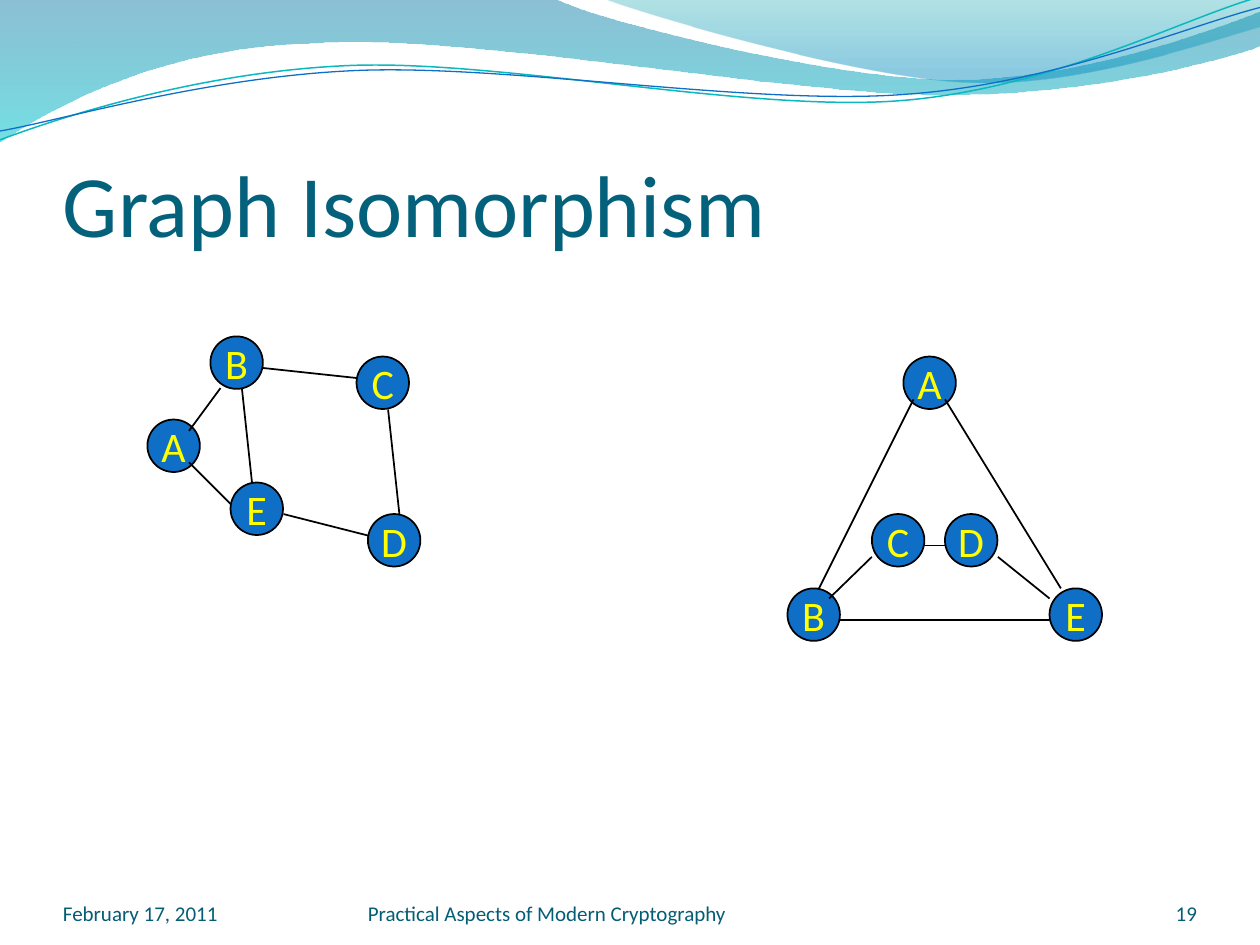
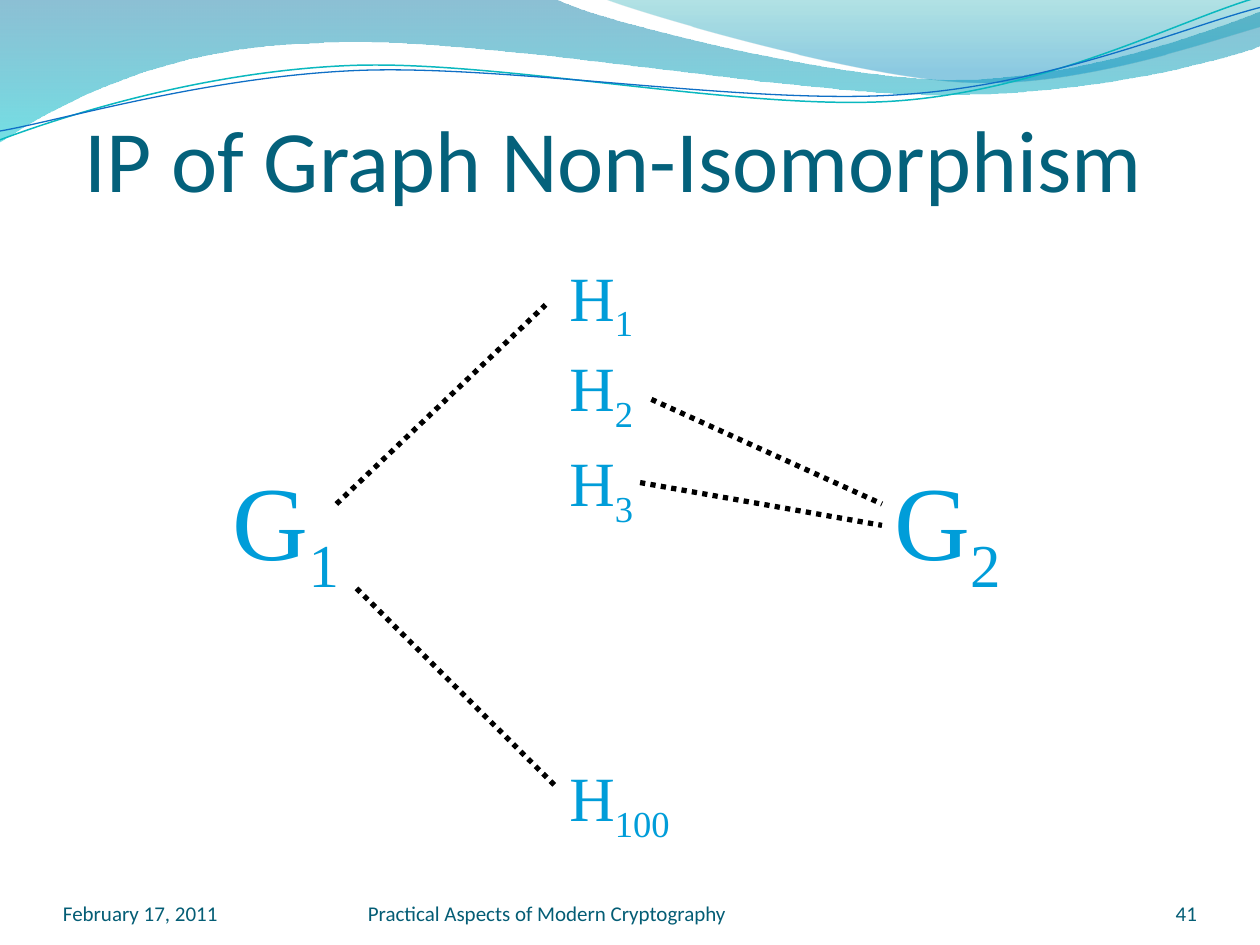
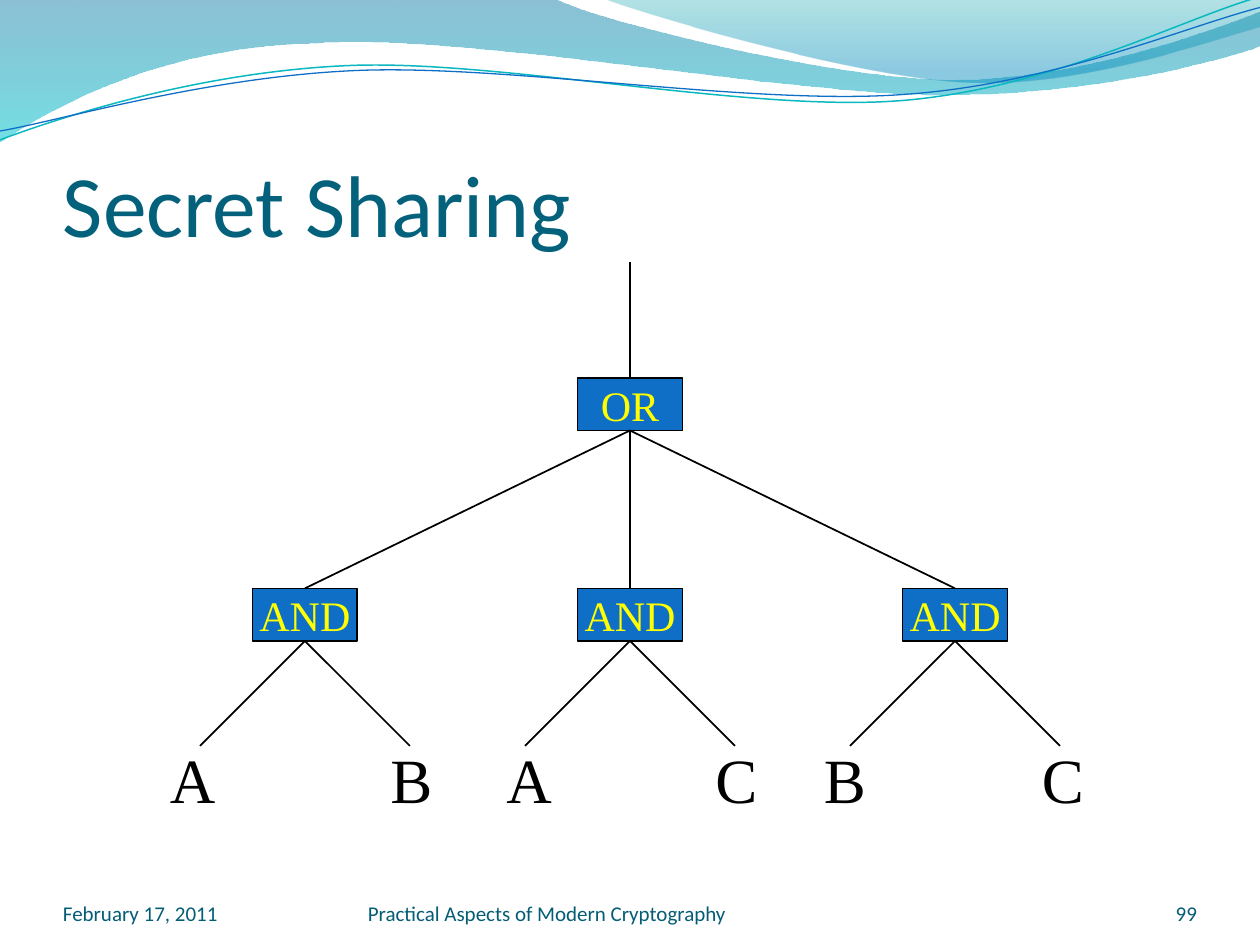
from math import cos, radians, sin

from pptx import Presentation
from pptx.dml.color import RGBColor as RGB
from pptx.enum.dml import MSO_LINE
from pptx.enum.shapes import MSO_CONNECTOR as CXN, MSO_SHAPE as SHAPE
from pptx.enum.text import MSO_ANCHOR as ANCHOR, MSO_AUTO_SIZE as FIT, PP_ALIGN as ALIGN
from pptx.oxml.ns import qn
from pptx.util import Inches, Pt

COLORS = {
    "title": "04617B", "footer": "045D75", "blue": "0F6FC6", "teal": "0AB8BF",
    "graph": "009DD9", "label": "FFFF00", "black": "000000",
    "wave_top": "0074A1", "wave_bottom": "00C6CF",
    "crest_top": "00A1A9", "crest_bottom": "008BBF",
}
C = {name: RGB.from_string(value) for name, value in COLORS.items()}
SANS, SERIF = "Calibri", "Times New Roman"
DATE, COURSE = "February 17, 2011", "Practical Aspects of Modern Cryptography"
TILT = 2.7  # degrees the thin waves are turned to the left

# Outline: start point, then lines (x, y) and curves (two controls, end).
# Filled bands: (colour, position, opacity) per gradient stop.
FILLED = [
    ([(0, 0), (4.4, -0.01), (4.76, 0.17, 6.64, 0.63, 7.58, 0.63),
      (8.53, 0.63, 9.58, 0.26, 10, 0.09), (10.01, 0.36),
      (9.83, 0.44, 8.7, 0.76, 7.46, 0.75), (6.22, 0.75, 3.82, 0.28, 2.57, 0.34),
      (1.29, 0.36, 0.46, 0.83, -0.01, 1.13), (0, 0)],
     [("wave_top", 0, 45), ("wave_bottom", 1, 55)]),
    ([(4.79, -0.01), (5.09, 0.11, 6.82, 0.62, 7.69, 0.65),
      (8.56, 0.69, 9.61, 0.32, 10, 0.21), (10, 0), (4.79, -0.01)],
     [("crest_top", 0, 30), ("crest_bottom", 0.8, 45)]),
]
# Thin waves: colour, width and the centre they are turned about.
THIN = [
    ([(0, 1.11), (0.48, 0.93, 1.58, 0.57, 2.77, 0.52),
      (3.95, 0.47, 5.93, 0.89, 7.13, 0.8), (8.33, 0.71, 9.38, 0.15, 9.98, -0.02)],
     "teal", 0.85, (4.99, 0.58)),
    ([(0, 1.04), (0.47, 0.96, 1.64, 0.61, 2.83, 0.56),
      (4.03, 0.51, 5.97, 0.84, 7.17, 0.75), (8.36, 0.67, 9.41, 0.21, 10, 0.06)],
     "blue", 0.75, (5, 0.59)),
]


def add_text(s, box, text, size, color, font=SANS, sub="", align=ALIGN.LEFT,
             anchor=ANCHOR.TOP, margins=(0.1, 0.05, 0.1, 0.05), wrap=False, shape=None):
    """Add a text box, or a filled preset shape, with an optional subscript."""
    place = [Inches(v) for v in box]
    if shape is None:
        sp = s.shapes.add_textbox(*place)
    else:
        sp = s.shapes.add_shape(shape, *place)
        sp.shadow.inherit = False
        sp.fill.solid()
        sp.fill.fore_color.rgb = C["blue"]
        sp.line.color.rgb = C["black"]
        sp.line.width = Pt(1)
    tf = sp.text_frame
    tf.word_wrap = wrap
    if shape is None and not wrap:
        tf.auto_size = FIT.SHAPE_TO_FIT_TEXT
    tf.vertical_anchor = anchor
    tf.margin_left, tf.margin_top, tf.margin_right, tf.margin_bottom = map(Inches, margins)
    p = tf.paragraphs[0]
    p.alignment = align
    p.font.name, p.font.size = font, Pt(size)
    p.font.color.rgb = C[color]
    for part in filter(None, (text, sub)):
        r = p.add_run()
        r.text = part
        r.font.name, r.font.size = font, Pt(size)
        r.font.color.rgb = C[color]
    if sub:
        r.font._element.set("baseline", "-25000")
    return sp


def add_line(s, x1, y1, x2, y2, width=1, dash=None):
    line = s.shapes.add_connector(CXN.STRAIGHT, *map(Inches, (x1, y1, x2, y2)))
    line.line.color.rgb = C["black"]
    line.line.width = Pt(width)
    if dash:
        line.line.dash_style = dash
    spPr = line._element.spPr
    spPr.append(spPr.makeelement(qn("a:effectLst"), {}))
    return line


prs = Presentation()
prs.slide_width, prs.slide_height = Inches(10), Inches(7.5)

# Shared frame: bands, title and footer
slides = []
for title, title_box, number in [
    ("Graph Isomorphism", (0.5, 0.77, 9, 1.25), "19"),
    ("IP of Graph Non-Isomorphism", (0.67, 0.42, 8.67, 1.25), "41"),
    ("Secret Sharing", (0.5, 0.77, 9, 1.25), "99"),
]:
    s = prs.slides.add_slide(prs.slide_layouts[6])
    slides.append(s)
    for outline, *style in FILLED + THIN:
        filled = len(style) == 1
        turn, (cx, cy) = (0, (0, 0)) if filled else (radians(TILT), style[2])
        points = []
        for seg in outline:
            for x, y in zip(seg[::2], seg[1::2]):
                dx, dy = x - cx, y - cy
                points.append((Inches(cx + dx * cos(turn) - dy * sin(turn)),
                               Inches(cy + dx * sin(turn) + dy * cos(turn))))
        builder = s.shapes.build_freeform(*points[0])
        builder.add_line_segments(points[1:], close=filled)
        sp = builder.convert_to_shape()
        sp.shadow.inherit = False
        # Join the three points of each curve into one Bezier segment
        lines = iter(list(sp._element.iter(qn("a:lnTo"))))
        for seg in outline[1:]:
            first = next(lines)
            if len(seg) == 6:
                curve = first.makeelement(qn("a:cubicBezTo"), {})
                first.addprevious(curve)
                for line in (first, next(lines), next(lines)):
                    curve.append(line[0])
                    line.getparent().remove(line)
        if filled:
            sp.line.fill.background()
            sp.fill.gradient()
            sp.fill.gradient_angle = 270
            for stop, (color, position, opacity) in zip(sp.fill.gradient_stops, style[0]):
                stop.color.rgb = C[color]
                stop.position = position
                rgb = stop._gs.find(qn("a:srgbClr"))
                rgb.append(rgb.makeelement(qn("a:alpha"), {"val": str(opacity * 1000)}))
        else:
            sp.rotation = 360 - TILT
            sp.fill.background()
            sp.line.color.rgb = C[style[0]]
            sp.line.width = Pt(style[1])
    add_text(s, title_box, title, 50, "title", anchor=ANCHOR.BOTTOM,
             margins=(0, 0.05, 0, 0), wrap=True)
    for x, w, text, align in [(0.5, 2.33, DATE, ALIGN.LEFT), (2.92, 3.67, COURSE, ALIGN.LEFT),
                              (8.67, 0.83, number, ALIGN.RIGHT)]:
        add_text(s, (x, 6.95, w, 0.4), text, 12, "footer", align=align,
                 anchor=ANCHOR.BOTTOM, margins=(0, 0, 0, 0), wrap=True)

graphs, proof, sharing = slides

# Two isomorphic graphs
NODE = 5 / 12
for name, x, y in [
    ("B", 1.67, 2.67), ("E", 1.83, 3.83), ("C", 2.83, 2.83), ("D", 2.92, 4.08), ("A", 1.17, 3.33),
    ("A", 7.17, 2.83), ("C", 6.92, 4.08), ("B", 6.25, 4.67), ("D", 7.5, 4.08), ("E", 8.33, 4.67),
]:
    add_text(graphs, (x, y, NODE, NODE), name, 24, "label", align=ALIGN.CENTER,
             anchor=ANCHOR.MIDDLE, shape=SHAPE.OVAL)
for edge in [
    (1.5, 3.42, 1.75, 3.08), (1.92, 3.08, 2, 3.83), (1.5, 3.67, 1.83, 4),
    (2.08, 2.92, 2.83, 3), (2.25, 4.08, 2.92, 4.25), (3.08, 3.25, 3.17, 4.08),
    (6.5, 4.67, 7.25, 3.17), (7.5, 3.17, 8.42, 4.67), (6.67, 4.92, 8.33, 4.92),
    (6.58, 4.75, 6.92, 4.42), (7.92, 4.42, 8.33, 4.75), (7.33, 4.33, 7.5, 4.33),
]:
    add_line(graphs, *edge)

# Graphs G and the permuted graphs H
for x, sub in [(1.75, "1"), (7, "2")]:
    add_text(proof, (x, 3.57, 1.08, 1.1), "G", 60, "graph", SERIF, sub)
for y, w, sub in [(2, 0.73, "1"), (2.72, 0.73, "2"), (3.47, 0.73, "3"), (5.97, 1.06, "100")]:
    add_text(proof, (4.42, y, w, 0.7), "H", 36, "graph", SERIF, sub)
for link in [(2.67, 4, 4.33, 2.42), (2.83, 4.67, 4.42, 6.25),
             (5.17, 3.17, 7, 4), (5.08, 3.83, 7, 4.17)]:
    add_line(proof, *link, width=3, dash=MSO_LINE.ROUND_DOT)

# Tree of gates
GATE_W, GATE_H = 5 / 6, 5 / 12
OR_X, OR_Y, AND_Y, LEAF_Y = 5, 3, 4.67, 5.92
gate_style = dict(font=SERIF, align=ALIGN.CENTER, anchor=ANCHOR.MIDDLE, shape=SHAPE.RECTANGLE)
or_gate = add_text(sharing, (OR_X - GATE_W / 2, OR_Y, GATE_W, GATE_H), "OR", 24, "label",
                   **gate_style)
add_line(sharing, OR_X, OR_Y, OR_X, 2.08).begin_connect(or_gate, 0)
for x, leaves in [
    (OR_X - 2.58, [("A", 1.25, 0.56), ("B", 3, 0.53)]),
    (OR_X, [("A", 3.92, 0.56), ("C", 5.58, 0.53)]),
    (OR_X + 2.58, [("B", 6.44, 0.53), ("C", 8.17, 0.53)]),
]:
    and_gate = add_text(sharing, (x - GATE_W / 2, AND_Y, GATE_W, GATE_H), "AND", 24, "label",
                        **gate_style)
    branch = add_line(sharing, OR_X, OR_Y + GATE_H, x, AND_Y)
    branch.begin_connect(or_gate, 2)
    branch.end_connect(and_gate, 0)
    for side, (name, leaf_x, w) in zip((-1, 1), leaves):
        twig = add_line(sharing, x, AND_Y + GATE_H, x + side * GATE_W, LEAF_Y)
        twig.begin_connect(and_gate, 2)
        add_text(sharing, (leaf_x, 5.83, w, 0.7), name, 36, "black", SERIF)

prs.save("out.pptx")
